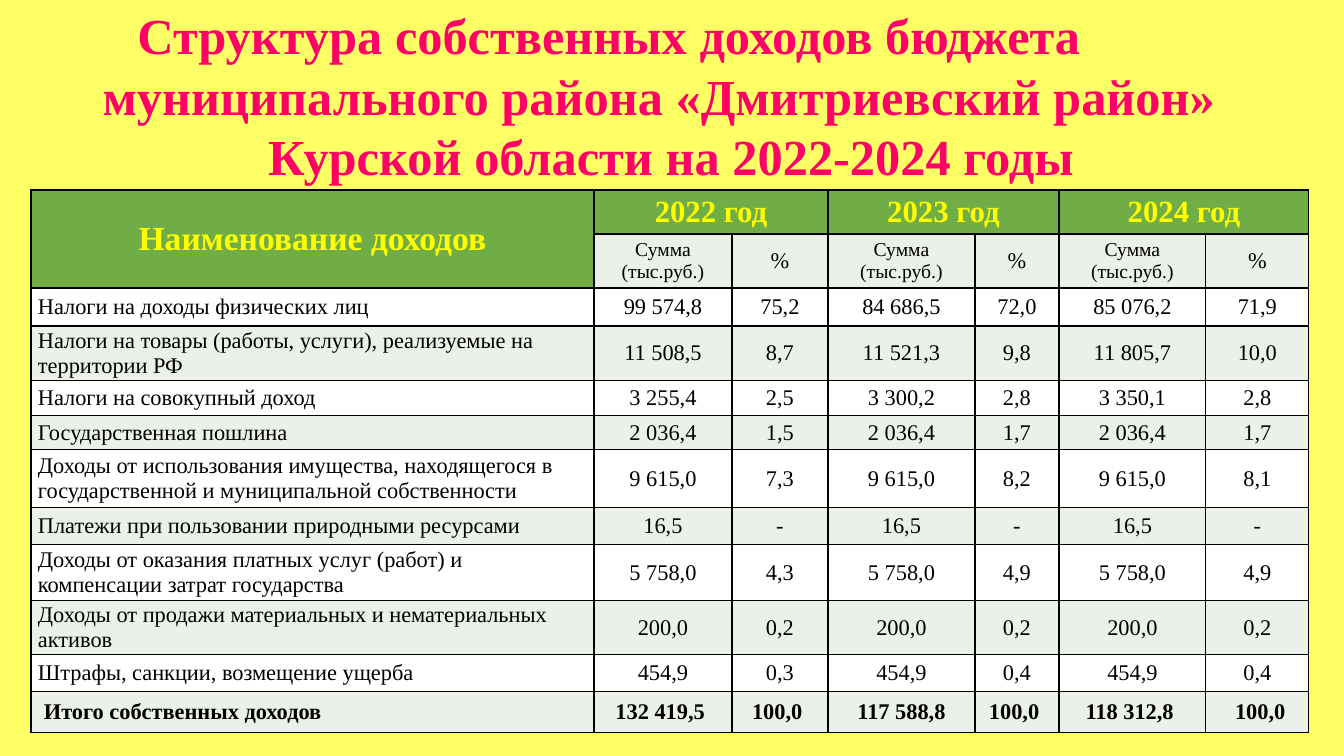
from lxml import etree
from pptx import Presentation, util as u
from pptx.dml.color import RGBColor
from pptx.enum import text
from pptx.oxml import ns

# Content
TITLE = [  # line, left indent in px
    ("Структура собственных доходов бюджета", 0),
    ("муниципального района «Дмитриевский район»", 100),
    ("Курской области на 2022-2024 годы", 124),
]
NAME_HEADER = "Наименование доходов"
YEARS = ["2022 год", "2023 год", "2024 год"]
SUM_HEADER, SHARE_HEADER = "Сумма (тыс.руб.)", "%"
INCOME = [
    ("Налоги на доходы физических лиц",
     "99 574,8", "75,2", "84 686,5", "72,0", "85 076,2", "71,9"),
    ("Налоги на товары (работы, услуги), реализуемые на территории РФ",
     "11 508,5", "8,7", "11 521,3", "9,8", "11 805,7", "10,0"),
    ("Налоги на совокупный доход",
     "3 255,4", "2,5", "3 300,2", "2,8", "3 350,1", "2,8"),
    ("Государственная пошлина",
     "2 036,4", "1,5", "2 036,4", "1,7", "2 036,4", "1,7"),
    ("Доходы от использования имущества, находящегося в "
     "государственной и муниципальной собственности",
     "9 615,0", "7,3", "9 615,0", "8,2", "9 615,0", "8,1"),
    ("Платежи при пользовании природными ресурсами",
     "16,5", "-", "16,5", "-", "16,5", "-"),
    ("Доходы от оказания платных услуг (работ) и компенсации затрат государства",
     "5 758,0", "4,3", "5 758,0", "4,9", "5 758,0", "4,9"),
    ("Доходы от продажи материальных и нематериальных активов",
     "200,0", "0,2", "200,0", "0,2", "200,0", "0,2"),
    ("Штрафы, санкции, возмещение ущерба",
     "454,9", "0,3", "454,9", "0,4", "454,9", "0,4"),
    ("Итого собственных доходов",
     "132 419,5 ", "100,0 ", "117 588,8", "100,0 ", "118 312,8 ", " 100,0"),
]
COLORS = {"background": "FFFF66", "title": "FF0066", "header": "70AD47",
          "header_text": "FFFF00", "band": "EBF1E9", "plain": "FFFFFF",
          "text": "000000", "border": "000000"}
FONT = "Times New Roman"

# Measures in px
SLIDE = (1344, 756)
TITLE_BOX = (0, 4, 1218, 182)
TABLE_LEFT, TABLE_TOP = 31, 190
COLUMNS = [563, 138, 96, 147, 84, 147, 103]
ROWS = [44, 54, 38, 55, 35, 34, 58, 37, 56, 50, 37, 41]
CELL_MARGIN, TOTAL_MARGIN = 7, 13


def px(value):
    return u.Emu(round(value * 914400 / 100.8))


def color(name):
    return RGBColor.from_string(COLORS[name])


def style(paragraph, size, color_name, bold=False, centred=True):
    paragraph.alignment = text.PP_ALIGN.CENTER if centred else text.PP_ALIGN.LEFT
    font = paragraph.font
    font.name, font.size, font.bold = FONT, u.Pt(size), bold
    font.color.rgb = color(color_name)


def add_borders(cell):
    properties = cell._tc.get_or_add_tcPr()
    for side in ("a:lnL", "a:lnR", "a:lnT", "a:lnB"):
        line = etree.SubElement(properties, ns.qn(side), w=str(u.Pt(1)))
        fill = etree.SubElement(line, ns.qn("a:solidFill"))
        etree.SubElement(fill, ns.qn("a:srgbClr"), val=COLORS["border"])


def write(cell, words, size, color_name="text", bold=False, centred=True):
    cell.text = words
    for paragraph in cell.text_frame.paragraphs:
        style(paragraph, size, color_name, bold, centred)


presentation = Presentation()
presentation.slide_width, presentation.slide_height = map(px, SLIDE)
slide = presentation.slides.add_slide(presentation.slide_layouts[6])
slide.background.fill.solid()
slide.background.fill.fore_color.rgb = color("background")

# Title
frame = slide.shapes.add_textbox(*map(px, TITLE_BOX)).text_frame
frame.word_wrap = True
frame.vertical_anchor = text.MSO_ANCHOR.MIDDLE
frame.margin_left = frame.margin_right = frame.margin_top = frame.margin_bottom = 0
for number, (words, indent) in enumerate(TITLE):
    paragraph = frame.paragraphs[0] if number == 0 else frame.add_paragraph()
    paragraph.text = words
    paragraph.line_spacing = u.Pt(43)
    style(paragraph, 36, "title", bold=True)
    paragraph._p.get_or_add_pPr().set("marL", str(px(indent)))

# Table grid
table = slide.shapes.add_table(
    len(ROWS), len(COLUMNS), px(TABLE_LEFT), px(TABLE_TOP),
    px(sum(COLUMNS)), px(sum(ROWS))).table
table.first_row = table.horz_banding = False
for column, width in zip(table.columns, COLUMNS):
    column.width = px(width)
for row_number, (row, height) in enumerate(zip(table.rows, ROWS)):
    row.height = px(height)
    for column_number, cell in enumerate(row.cells):
        add_borders(cell)
        is_header = row_number == 0 or (row_number == 1 and column_number == 0)
        fill_name = "header" if is_header else "band" if row_number % 2 else "plain"
        cell.fill.solid()
        cell.fill.fore_color.rgb = color(fill_name)
        cell.vertical_anchor = text.MSO_ANCHOR.MIDDLE
        cell.margin_left = cell.margin_right = px(CELL_MARGIN)
        cell.margin_top = cell.margin_bottom = 0

# Table headers
table.cell(0, 0).merge(table.cell(1, 0))
write(table.cell(0, 0), NAME_HEADER, 24, "header_text", bold=True)
for number, year in enumerate(YEARS):
    first = 1 + 2 * number
    table.cell(0, first).merge(table.cell(0, first + 1))
    write(table.cell(0, first), year, 22, "header_text", bold=True)
    write(table.cell(1, first), SUM_HEADER, 14)
    write(table.cell(1, first + 1), SHARE_HEADER, 16)

# Income rows, the last one being the total
for row_number, values in enumerate(INCOME, start=2):
    is_total = row_number == len(ROWS) - 1
    for column_number, value in enumerate(values):
        write(table.cell(row_number, column_number), value, 16,
              bold=is_total, centred=column_number > 0)
table.cell(len(ROWS) - 1, 0).margin_left = px(TOTAL_MARGIN)

presentation.save("out.pptx")
